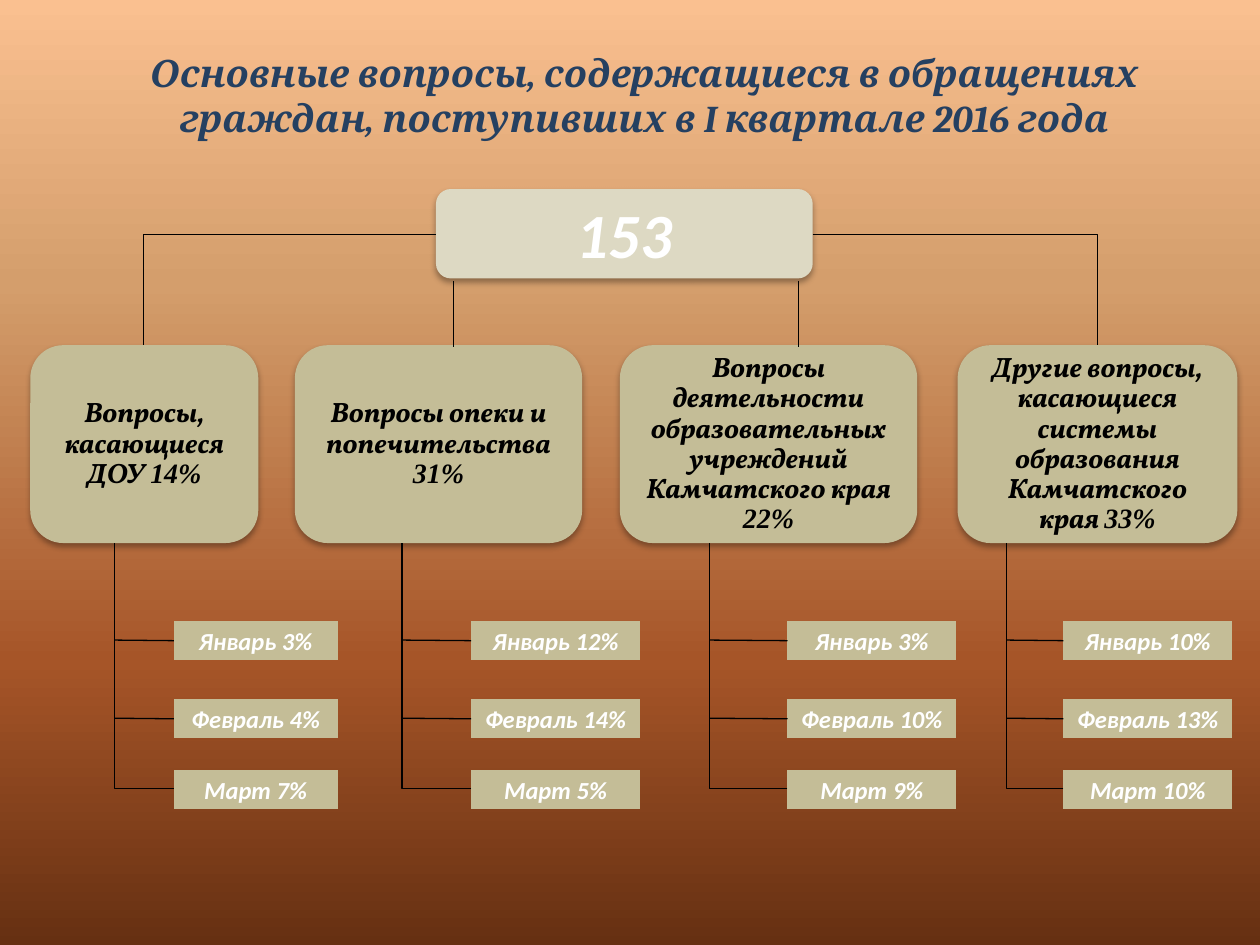
"""Builds a one-slide tree of the questions raised in citizens' appeals."""
from lxml import etree
from pptx import Presentation, util as u
from pptx.dml.color import RGBColor
from pptx.enum import shapes, text
from pptx.oxml import ns

COLORS = {"title": "254061", "total": "DDD9C3", "box": "C4BD97", "light": "FFFFFF", "dark": "000000"}
BACKGROUND = [(0, "FAC090"), (30, "D49E6C"), (70, "A65528"), (100, "663012")]
PX = u.Inches(1) // 100
TITLE = "Основные вопросы, содержащиеся в обращениях граждан, поступивших в I квартале 2016 года"
MONTHS = [("Январь", 493), ("Февраль", 555), ("Март", 611)]
MONTH_HEIGHT = 31
TOPICS = [
    dict(name="Вопросы, касающиеся ДОУ", share=14, left=24, width=181,
         trunk=91, month_left=138, month_width=130, shares=(3, 4, 7)),
    dict(name="Вопросы опеки и попечительства", share=31, left=234, width=228,
         trunk=319, month_left=374, month_width=134, shares=(12, 14, 5)),
    dict(name="Вопросы деятельности образовательных учреждений Камчатского края", share=22,
         left=492, width=236, trunk=563, month_left=625, month_width=134, shares=(3, 10, 9)),
    dict(name="Другие вопросы, касающиеся системы образования Камчатского края", share=33,
         left=760, width=222, trunk=799, month_left=844, month_width=134, shares=(10, 13, 10)),
]


def add(parent, tag, **attrs):
    return etree.SubElement(parent, ns.qn(tag), {k: str(v) for k, v in attrs.items()})


class Deck:
    def __init__(self):
        self.prs = Presentation()
        self.prs.slide_width, self.prs.slide_height = 1000 * PX, 750 * PX
        self.s = self.prs.slides.add_slide(self.prs.slide_layouts[6])

    def background(self, stops):
        fill = self.s.background.fill
        fill.gradient()
        fill.gradient_angle = 270
        gs_list = self.s._element.find(".//" + ns.qn("a:gsLst"))
        for gs in list(gs_list):
            gs_list.remove(gs)
        for pos, color in stops:
            add(add(gs_list, "a:gs", pos=pos * 1000), "a:srgbClr", val=color)

    def label(self, sp, runs, size, color):
        tf = sp.text_frame
        tf.word_wrap = True
        tf.vertical_anchor = text.MSO_ANCHOR.MIDDLE
        p = tf.paragraphs[0]
        p.alignment = text.PP_ALIGN.CENTER
        for words, font in runs:
            r = p.add_run()
            r.text = words
            r.font.name, r.font.size = font, u.Pt(size)
            r.font.bold = r.font.italic = True
            r.font.color.rgb = RGBColor.from_string(COLORS[color])
        return p

    def title(self, words, x, y, w, h):
        sp = self.s.shapes.add_textbox(x * PX, y * PX, w * PX, h * PX)
        self.label(sp, [(words, "Cambria")], 21.6, "title")

    def box(self, kind, x, y, w, h, fill):
        sp = self.s.shapes.add_shape(kind, x * PX, y * PX, w * PX, h * PX)
        sp.fill.solid()
        sp.fill.fore_color.rgb = RGBColor.from_string(COLORS[fill])
        sp.line.fill.background()
        sp.shadow.inherit = False
        return sp

    def rounded(self, x, y, w, h, fill):
        sp = self.box(shapes.MSO_SHAPE.FLOWCHART_ALTERNATE_PROCESS, x, y, w, h, fill)
        effects = sp._element.spPr.find(ns.qn("a:effectLst"))
        shadow = add(effects, "a:outerShdw", blurRad=u.Pt(3.5), dist=u.Pt(2.2),
                     dir=5400000, rotWithShape=0)
        add(add(shadow, "a:srgbClr", val=COLORS["dark"]), "a:alpha", val=32000)
        return sp

    def total(self, words, *place):
        self.label(self.rounded(*place, "total"), [(words, "Calibri")], 36, "light")

    def topic(self, name, share, *place):
        runs = [(name + " ", "Vollkorn"), (f"{share}%", "Times New Roman")]
        p = self.label(self.rounded(*place, "box"), runs, 16, "dark")
        p.line_spacing = 0.9

    def month(self, words, *place):
        sp = self.box(shapes.MSO_SHAPE.FLOWCHART_PROCESS, *place, "box")
        self.label(sp, [(words, "Calibri")], 14, "light")
        return sp

    def line(self, x1, y1, x2, y2, kind=shapes.MSO_CONNECTOR.STRAIGHT):
        c = self.s.shapes.add_connector(kind, x1 * PX, y1 * PX, x2 * PX, y2 * PX)
        c.line.color.rgb = RGBColor.from_string(COLORS["dark"])
        c.line.width = u.Pt(0.75)
        add(c._element.spPr, "a:effectLst")
        return c

    def elbow(self, x1, y1, x2, y2):
        c = self.line(x1, y1, x2, y2, shapes.MSO_CONNECTOR.ELBOW)
        c._element.spPr.find(ns.qn("a:prstGeom")).set("prst", "bentConnector2")


def main():
    deck = Deck()
    deck.background(BACKGROUND)
    deck.title(TITLE, 51, 44, 921, 63)
    deck.total("153", 346, 150, 299, 71)
    top, height = 274, 157
    for t in TOPICS:
        deck.topic(t["name"], t["share"], t["left"], top, t["width"], height)
        for (month, y), share in zip(MONTHS, t["shares"]):
            x, middle = t["month_left"], y + MONTH_HEIGHT // 2
            sp = deck.month(f"{month} {share}%", x, y, t["month_width"], MONTH_HEIGHT)
            if month == MONTHS[-1][0]:
                deck.elbow(x, middle, t["trunk"], top + height)
            else:
                deck.line(t["trunk"], middle, x, middle).end_connect(sp, 1)
    for start, end in ((346, 114), (645, 871)):
        deck.elbow(start, 186, end, top)
    for x in (360, 634):
        deck.line(x, 223, x, top + 1)
    deck.prs.save("out.pptx")


if __name__ == "__main__":
    main()
